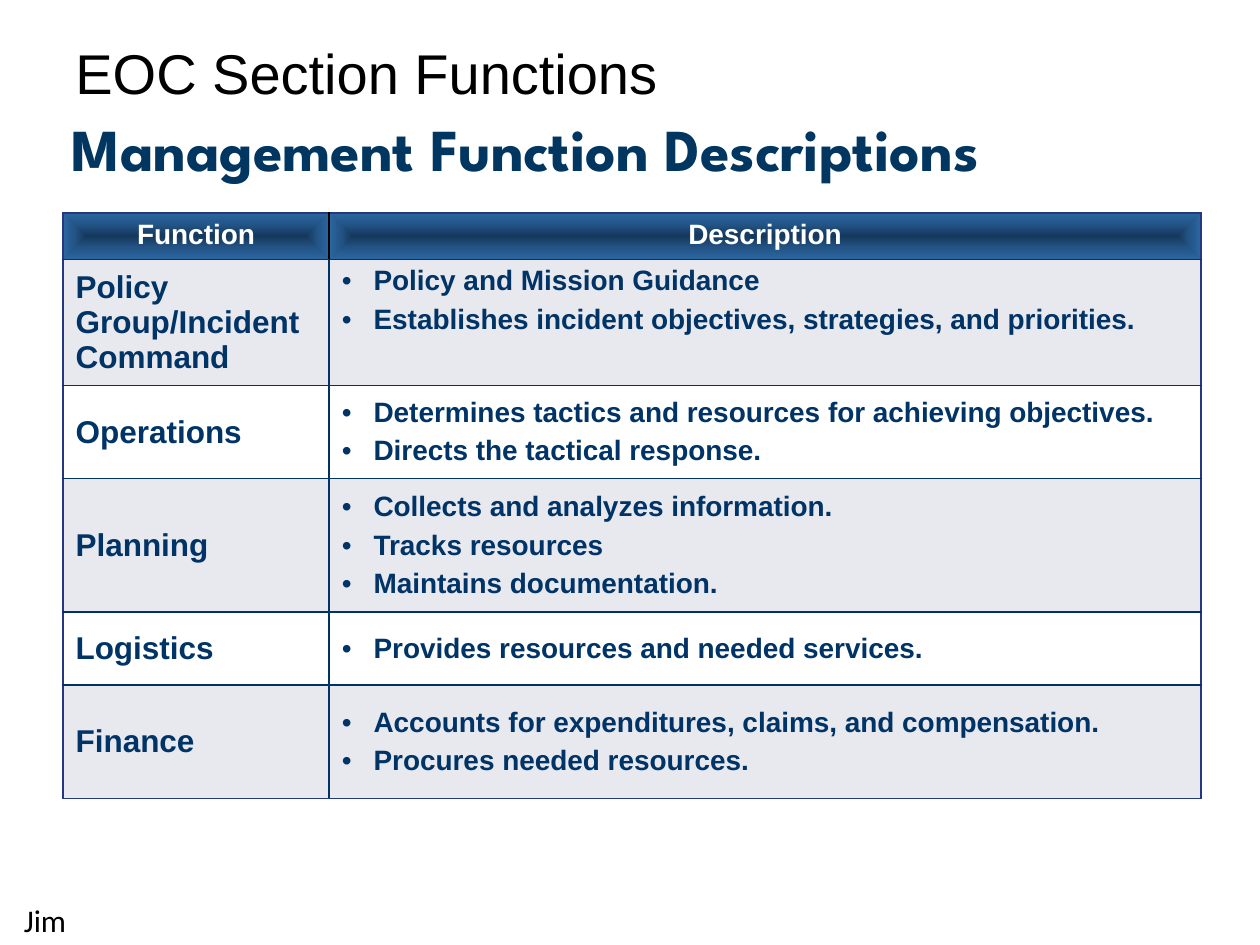
from dataclasses import dataclass

from lxml import etree
from pptx import Presentation
from pptx.dml.color import RGBColor
from pptx.enum.text import MSO_ANCHOR, PP_ALIGN
from pptx.oxml import parse_xml
from pptx.oxml.ns import nsdecls, qn
from pptx.util import Cm, Pt


@dataclass(frozen=True)
class Theme:
    navy: str = "003366"
    title: str = "003660"
    frame: str = "25387D"
    black: str = "000000"
    white: str = "FFFFFF"
    band: str = "E8E8EF"
    header_stops: tuple = ((0, "15385C"), (50, "235486"), (100, "2B66A1"))
    body_font: str = "Arial"
    title_font: str = "League Spartan"
    note_font: str = "Calibri"
    heading_size: int = 32
    title_size: int = 34
    label_size: int = 18
    text_size: int = 16


T = Theme()

HEADERS = ("Function", "Description")
FUNCTIONS = [
    ("Policy Group/Incident Command",
     ["Policy and Mission Guidance",
      "Establishes incident objectives, strategies, and priorities."]),
    ("Operations",
     ["Determines tactics and resources for achieving objectives.",
      "Directs the tactical response."]),
    ("Planning",
     ["Collects and analyzes information.", "Tracks resources",
      "Maintains documentation."]),
    ("Logistics", ["Provides resources and needed services."]),
    ("Finance",
     ["Accounts for expenditures, claims, and compensation.",
      "Procures needed resources."]),
]
ROW_HEIGHTS = (0.94, 2.38, 1.88, 2.69, 1.47, 2.29)
LABEL_SHARE = 0.234


def add_run(p, text, size, color, font=T.body_font, bold=False):
    r = p.add_run()
    r.text = text
    r.font.size = Pt(size)
    r.font.name = font
    r.font.bold = bold
    r.font.color.rgb = RGBColor.from_string(color)


def add_text(s, box, text, size, color, font, bold=False, wrap=True, spacing=None):
    tf = s.shapes.add_textbox(*(Cm(v) for v in box)).text_frame
    tf.word_wrap = wrap
    p = tf.paragraphs[0]
    p.line_spacing = spacing
    add_run(p, text, size, color, font, bold)


def set_borders(cell, left, right, top, bottom):
    tc_pr = cell._tc.get_or_add_tcPr()
    for side, color in zip("LRTB", (left, right, top, bottom)):
        ln = etree.SubElement(tc_pr, qn(f"a:ln{side}"), w=str(Pt(1)))
        fill = etree.SubElement(ln, qn("a:solidFill"))
        etree.SubElement(fill, qn("a:srgbClr"), val=color)


def fill_header(cell):
    stops = "".join(f'<a:gs pos="{pos * 1000}"><a:srgbClr val="{color}"/></a:gs>'
                    for pos, color in T.header_stops)
    cell._tc.get_or_add_tcPr().append(parse_xml(
        f'<a:gradFill {nsdecls("a")} rotWithShape="1"><a:gsLst>{stops}</a:gsLst>'
        '<a:path path="rect"><a:fillToRect l="50000" t="50000" r="50000" b="50000"/>'
        '</a:path></a:gradFill>'))


def add_bullets(tf, items):
    for i, item in enumerate(items):
        p = tf.add_paragraph() if i else tf.paragraphs[0]
        p_pr = p._p.get_or_add_pPr()
        p_pr.set("marL", str(Cm(0.64)))
        p_pr.set("indent", str(-Cm(0.64)))
        etree.SubElement(p_pr, qn("a:buFont"), typeface=T.body_font)
        etree.SubElement(p_pr, qn("a:buChar"), char="•")
        if i:
            p.space_before = Pt(4.2)
        add_run(p, item, T.text_size, T.navy, bold=True)


def add_function_table(s, left, top, width):
    table = s.shapes.add_table(
        len(ROW_HEIGHTS), len(HEADERS), Cm(left), Cm(top),
        Cm(width), Cm(sum(ROW_HEIGHTS))).table
    for col, share in zip(table.columns, (LABEL_SHARE, 1 - LABEL_SHARE)):
        col.width = Cm(width * share)
    for row, height in zip(table.rows, ROW_HEIGHTS):
        row.height = Cm(height)

    # Borders: outer frame, inner rules and the header divider
    last = len(ROW_HEIGHTS) - 1
    for i in range(last + 1):
        divider = T.navy if i else T.black
        top_line = T.navy if i else T.frame
        bottom_line = T.frame if i == last else T.navy
        set_borders(table.cell(i, 0), T.frame, divider, top_line, bottom_line)
        set_borders(table.cell(i, 1), divider, T.frame, top_line, bottom_line)

    # Header row
    for j, header in enumerate(HEADERS):
        cell = table.cell(0, j)
        fill_header(cell)
        p = cell.text_frame.paragraphs[0]
        p.alignment = PP_ALIGN.CENTER
        add_run(p, header, T.text_size, T.white, bold=True)

    # Function rows, in alternating bands
    for i, (name, duties) in enumerate(FUNCTIONS, 1):
        label, description = table.cell(i, 0), table.cell(i, 1)
        for cell in (label, description):
            cell.vertical_anchor = MSO_ANCHOR.MIDDLE
            cell.fill.solid()
            cell.fill.fore_color.rgb = RGBColor.from_string(T.band if i % 2 else T.white)
        add_run(label.text_frame.paragraphs[0], name, T.label_size, T.navy, bold=True)
        add_bullets(description.text_frame, duties)
    table.cell(1, 1).vertical_anchor = MSO_ANCHOR.TOP


def build_slide(prs):
    s = prs.slides.add_slide(prs.slide_layouts[6])
    # Headings
    add_text(s, (1.19, 2.29, 22.86, 2.97), "Management Function Descriptions",
             T.title_size, T.title, T.title_font, bold=True, spacing=0.9)
    add_text(s, (1.27, 0.66, 15.44, 1.63), "EOC Section Functions",
             T.heading_size, T.black, T.body_font)
    # Table of functions
    add_function_table(s, 1.27, 4.29, 22.94)
    # Presenter
    add_text(s, (0.23, 18.03, 1.37, 1.02), "Jim",
             T.label_size, T.black, T.note_font, wrap=False)


def main():
    prs = Presentation()
    prs.slide_width, prs.slide_height = Cm(25.4), Cm(19.05)
    build_slide(prs)
    prs.save("out.pptx")


if __name__ == "__main__":
    main()
